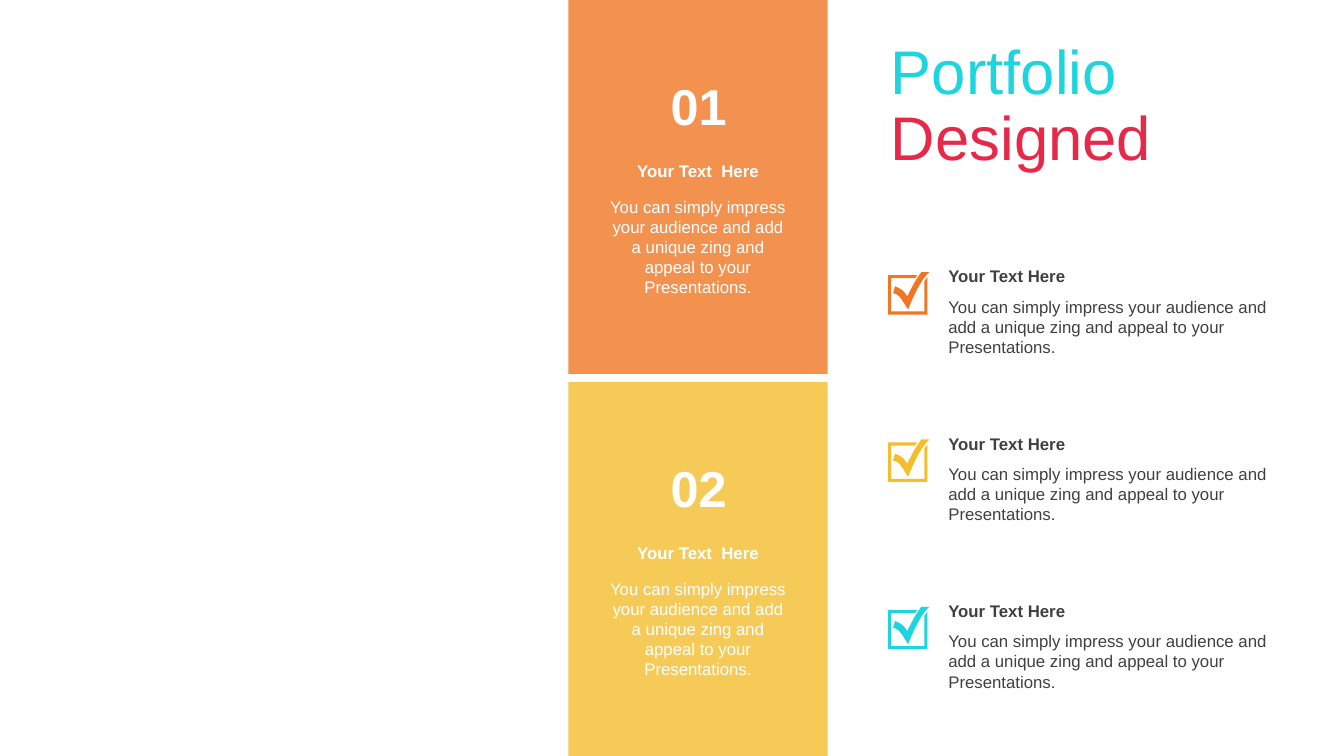
from lxml import etree
from pptx import Presentation
from pptx.dml.color import RGBColor
from pptx.enum import shapes, text
from pptx.oxml import ns
from pptx.util import Pt

THEME = {
    "font": "Arial", "orange": "F07624", "yellow": "F4BD2D",
    "cyan": "1ED4DE", "red": "E62949", "white": "FFFFFF", "dark": "404040",
    "title": 44, "number": 36, "body": 12,
}
BODY = ("You can simply impress your audience and add a unique zing "
        "and appeal to your Presentations.")
LEFT, CENTER = text.PP_ALIGN.LEFT, text.PP_ALIGN.CENTER


def add_text(s, box, runs, size, bold=False, align=LEFT, inset=7.2, grow=True, spacing=None):
    tf = s.shapes.add_textbox(*map(Pt, box)).text_frame
    fit = text.MSO_AUTO_SIZE.SHAPE_TO_FIT_TEXT if grow else text.MSO_AUTO_SIZE.NONE
    frame = {"word_wrap": True, "auto_size": fit,
             "margin_left": Pt(inset), "margin_right": Pt(inset)}
    for name, value in frame.items():
        setattr(tf, name, value)
    p = tf.paragraphs[0]
    p.alignment = align
    p.line_spacing = spacing
    for words, color in runs:
        r = p.add_run()
        r.text = words
        font = {"name": THEME["font"], "size": Pt(THEME[size]), "bold": bold}
        for name, value in font.items():
            setattr(r.font, name, value)
        r.font.color.rgb = RGBColor.from_string(THEME[color])


def bezier(a, b, c, d, steps=8):
    points = []
    for i in range(1, steps + 1):
        t = i / steps
        u = 1 - t
        points.append(tuple(
            u**3 * a[k] + 3 * u * u * t * b[k] + 3 * u * t * t * c[k] + t**3 * d[k]
            for k in (0, 1)))
    return points


prs = Presentation()
prs.slide_width, prs.slide_height = Pt(960), Pt(540)
s = prs.slides.add_slide(prs.slide_layouts[6])

add_text(s, (629.28, 25.92, 244.08, 113.04),
         [("Portfolio ", "cyan"), ("Designed", "red")], "title", grow=False, spacing=0.9)

PANEL_STEP = 272.88
for i, color in enumerate(("orange", "yellow")):
    top = i * PANEL_STEP
    sp = s.shapes.add_shape(shapes.MSO_SHAPE.RECTANGLE,
                            Pt(406.08), Pt(top), Pt(185.04), Pt(267.12))
    sp.shadow.inherit = False
    sp.fill.solid()
    sp.fill.fore_color.rgb = RGBColor.from_string(THEME[color])
    sp.line.fill.background()
    srgb = sp.fill._xPr.find(".//" + ns.qn("a:srgbClr"))
    etree.SubElement(srgb, ns.qn("a:alpha"), val="80000")

    add_text(s, (463.68, top + 50.4, 70.56, 51.12), [(f"{i + 1:02}", "white")],
             "number", bold=True, align=CENTER, inset=8.64)
    add_text(s, (428.4, top + 111.6, 140.4, 21.6), [("Your Text  Here", "white")],
             "body", bold=True, align=CENTER)
    add_text(s, (428.4, top + 136.8, 140.4, 79.92), [(BODY, "white")],
             "body", align=CENTER)

ICON_UNIT = 0.72
frame_outline = [(0, 3), (29, 3), (27, 6), (3, 6), (3, 39), (36, 39),
                 (36, 9), (39, 5), (39, 42), (0, 42)]
tick_outline = [
    (41, 0),
    *bezier((41, 0), (33, 7), (25, 24), (20, 37)),
    *bezier((20, 37), (16, 32), (12, 21), (5, 21)),
    (7, 14),
    *bezier((7, 14), (14, 17), (16, 19), (19, 24)),
    *bezier((19, 24), (24, 15), (25, 11), (33, 0)),
]

ITEM_STEP = 119.52
for i, color in enumerate(("orange", "yellow", "cyan")):
    top = 186.48 + i * ITEM_STEP
    add_text(s, (670.32, top + 21.6, 244.08, 51.12), [(BODY, "dark")], "body")
    add_text(s, (670.32, top, 241.92, 21.6), [("Your Text Here", "dark")],
             "body", bold=True)

    frame, tick = [
        [(Pt(634.32 + x * ICON_UNIT), Pt(top + 7.92 + y * ICON_UNIT)) for x, y in outline]
        for outline in (frame_outline, tick_outline)]
    builder = s.shapes.build_freeform(*frame[0])
    builder.add_line_segments(frame[1:], close=True)
    builder.move_to(*tick[0])
    builder.add_line_segments(tick[1:], close=True)
    sp = builder.convert_to_shape()
    sp.shadow.inherit = False
    sp.fill.solid()
    sp.fill.fore_color.rgb = RGBColor.from_string(THEME[color])
    sp.line.fill.background()

prs.save("out.pptx")
